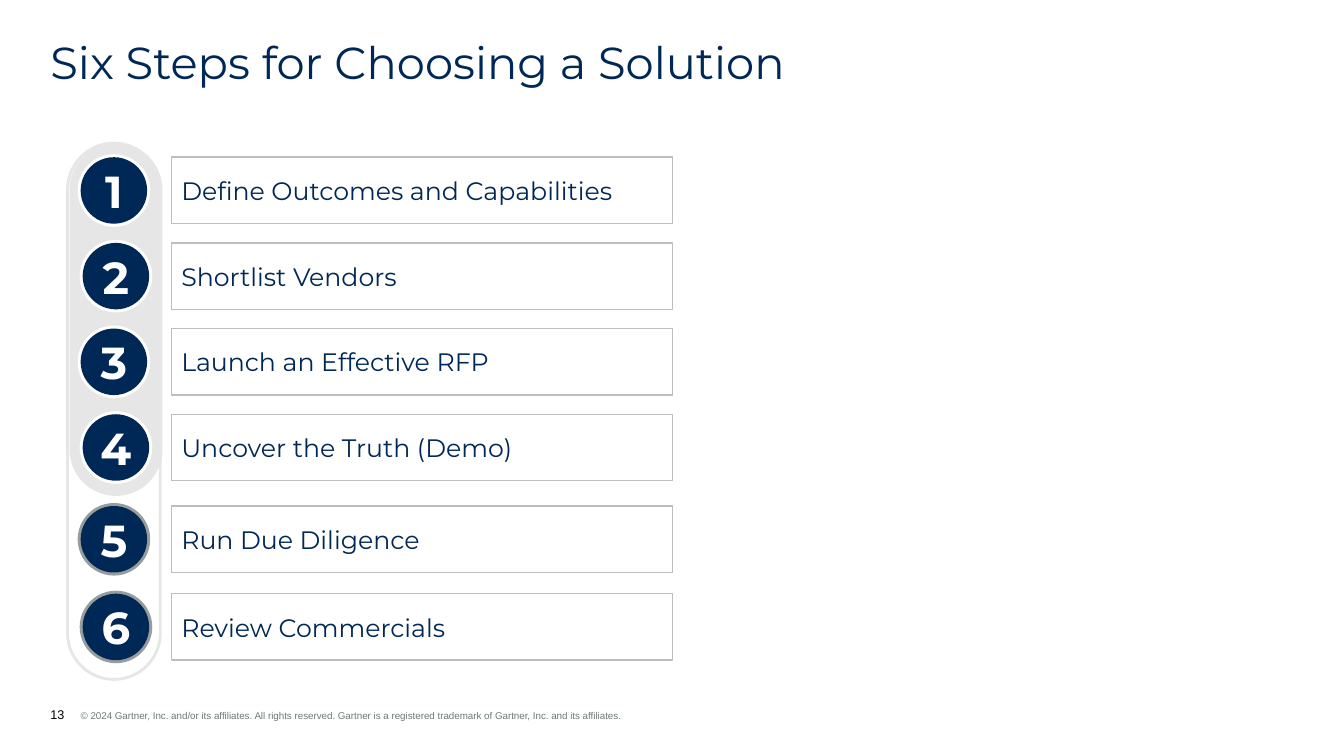
"""Build the slide listing six steps for choosing a solution."""

from dataclasses import dataclass

from lxml.etree import SubElement
from pptx import Presentation
from pptx.dml.color import RGBColor as Rgb
from pptx.enum.shapes import MSO_SHAPE as Kind
from pptx.enum.text import MSO_ANCHOR as Anchor, PP_ALIGN as Align
from pptx.oxml.ns import qn
from pptx.shapes.autoshape import Shape
from pptx.slide import Slide
from pptx.text.text import Font, TextFrame
from pptx.util import Inches, Pt


@dataclass(frozen=True)
class Theme:
    navy: str = "002856"
    white: str = "FFFFFF"
    black: str = "000000"
    pale: str = "E6E6E6"
    edge: str = "BDBDBD"
    grey: str = "979D9D"
    note: str = "6F7878"
    face: str = "Montserrat"
    plain: str = "Arial"
    large: float = 32
    body: float = 18
    page: float = 9
    small: float = 7


@dataclass(frozen=True)
class Box:
    left: float
    top: float
    width: float
    height: float


@dataclass(frozen=True)
class Step:
    label: str
    top: float
    ring: str


THEME = Theme()
SIDE = 0.66
RIM = 0.03
STEPS = (
    Step("Define Outcomes and Capabilities", 1.56, THEME.white),
    Step("Shortlist Vendors", 2.41, THEME.white),
    Step("Launch an Effective RFP", 3.26, THEME.white),
    Step("Uncover the Truth (Demo)", 4.11, THEME.white),
    Step("Run Due Diligence", 5.02, THEME.grey),
    Step("Review Commercials", 5.89, THEME.grey),
)


def place(box: Box) -> tuple[int, int, int, int]:
    return Inches(box.left), Inches(box.top), Inches(box.width), Inches(box.height)


def style(font: Font, size: float, color: str, face: str, bold: bool = False) -> None:
    font.size, font.name, font.bold = Pt(size), face, bold
    font.color.rgb = Rgb.from_string(color)


def inset(frame: TextFrame, side: float = 0) -> None:
    frame.margin_left = frame.margin_right = Inches(side)
    frame.margin_top = frame.margin_bottom = 0
    frame.word_wrap = True


def draw(slide: Slide, kind: Kind, box: Box, fill: str = "",
         line: str = "", width: float = 1) -> Shape:
    shape = slide.shapes.add_shape(kind, *place(box))
    shape.shadow.inherit = False
    if fill:
        shape.fill.solid()
        shape.fill.fore_color.rgb = Rgb.from_string(fill)
    else:
        shape.fill.background()
    if line:
        shape.line.color.rgb = Rgb.from_string(line)
        shape.line.width = Pt(width)
    else:
        shape.line.fill.background()
    return shape


def write(shape: Shape, text: str, size: float, color: str, align: Align,
          side: float = 0, bold: bool = False) -> None:
    frame = shape.text_frame
    inset(frame, side)
    frame.vertical_anchor = Anchor.MIDDLE
    para = frame.paragraphs[0]
    para.text, para.alignment = text, align
    style(para.font, size, color, THEME.face, bold)


def add_title(slide: Slide) -> None:
    title = slide.shapes.title
    title.left, title.top, title.width, title.height = place(Box(0.5, 0.4, 12.33, 0.48))
    write(title, "Six Steps for Choosing a Solution", THEME.large, THEME.navy, Align.LEFT)
    title.text_frame.paragraphs[0].line_spacing = 0.9


def add_track(slide: Slide) -> None:
    fill = draw(slide, Kind.ROUNDED_RECTANGLE, Box(0.69, 1.42, 0.92, 3.5), THEME.pale)
    rim = draw(slide, Kind.ROUNDED_RECTANGLE, Box(0.67, 1.42, 0.92, 5.32),
               line=THEME.pale, width=2)
    for pill in (fill, rim):
        pill.adjustments[0] = 0.5


def add_step(slide: Slide, index: int, step: Step) -> None:
    left = 0.8 + 0.02 * (index % 2)
    outer = SIDE + 2 * RIM
    draw(slide, Kind.OVAL, Box(left - RIM, step.top - RIM, outer, outer), step.ring)
    disc = draw(slide, Kind.OVAL, Box(left, step.top, SIDE, SIDE), THEME.navy)
    write(disc, str(index + 1), THEME.large, THEME.white, Align.CENTER, bold=True)
    card = draw(slide, Kind.RECTANGLE, Box(1.7, step.top, 4.97, SIDE), line=THEME.edge)
    write(card, step.label, THEME.body, THEME.navy, Align.LEFT, side=0.1)


def add_foot(slide: Slide) -> None:
    frame = slide.shapes.add_textbox(*place(Box(0.5, 7.01, 7.85, 0.15))).text_frame
    inset(frame)
    frame.vertical_anchor = Anchor.BOTTOM
    para = frame.paragraphs[0]
    props = para._p.get_or_add_pPr()
    props.set("marL", str(Inches(0.3)))
    props.set("indent", str(-Inches(0.3)))
    tabs = SubElement(props, qn("a:tabLst"))
    SubElement(tabs, qn("a:tab"), pos=str(Inches(0.3)), algn="l")
    parts = (
        ("13", THEME.page, THEME.black),
        ("\t© 2024 Gartner, Inc. and/or its affiliates. All rights reserved. "
         "Gartner is a registered trademark of Gartner, Inc. and its affiliates.",
         THEME.small, THEME.note),
    )
    for text, size, color in parts:
        run = para.add_run()
        run.text = text
        style(run.font, size, color, THEME.plain)


def main() -> None:
    deck = Presentation()
    deck.slide_width, deck.slide_height = Inches(13.33), Inches(7.5)
    slide = deck.slides.add_slide(deck.slide_layouts[5])
    add_title(slide)
    add_track(slide)
    for index, step in enumerate(STEPS):
        add_step(slide, index, step)
    add_foot(slide)
    deck.save("out.pptx")


if __name__ == "__main__":
    main()
